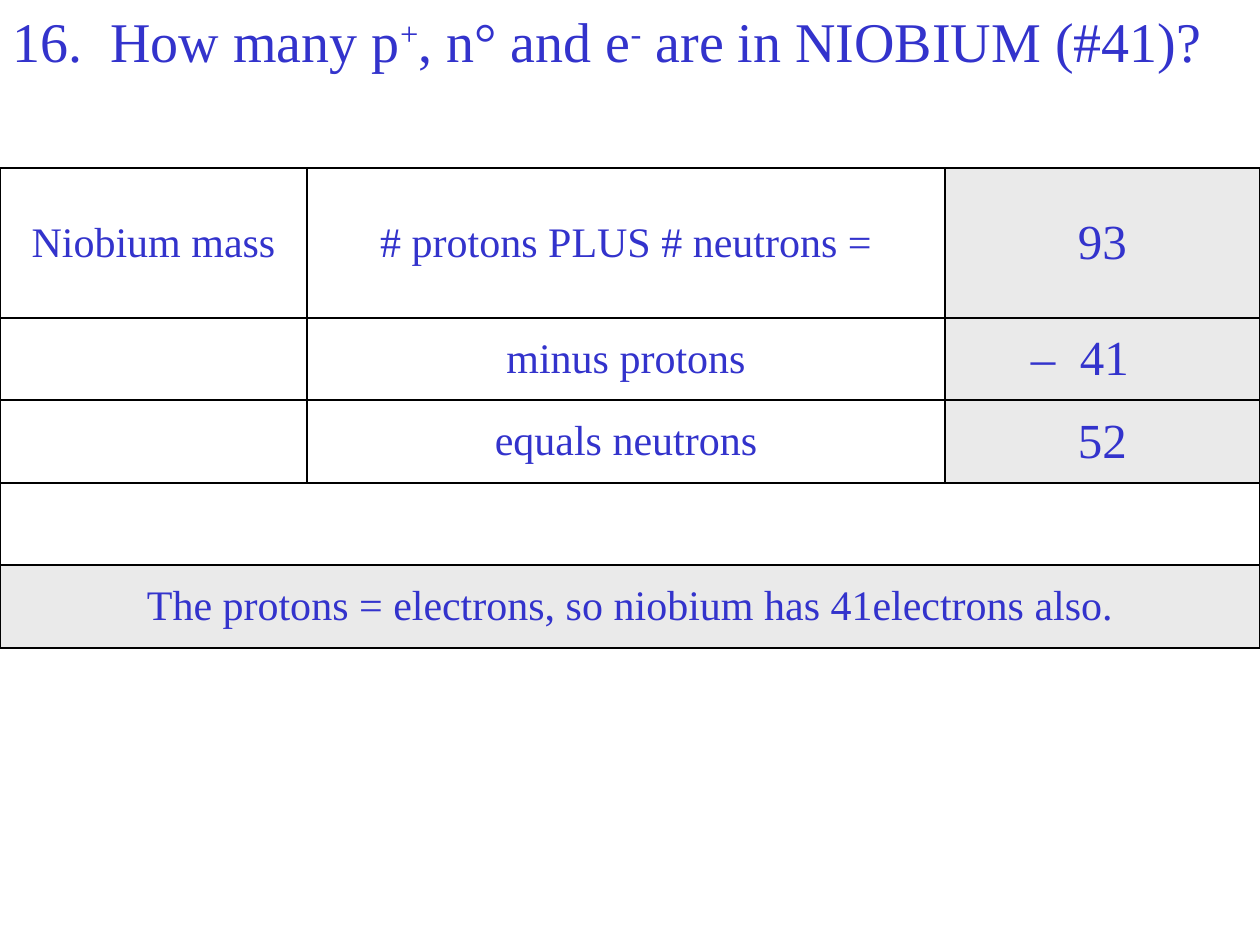
from lxml.etree import SubElement
from pptx import Presentation
from pptx.dml.color import RGBColor
from pptx.enum.text import MSO_ANCHOR as Anchor, PP_ALIGN as Align
from pptx.oxml.ns import qn
from pptx.util import Emu, Pt

BLUE = RGBColor(0x33, 0x33, 0xCC)
GREY = RGBColor(0xEA, 0xEA, 0xEA)
BLACK = RGBColor(0, 0, 0)
FONT = "Times New Roman"


def px(value):
    return Emu(round(value * 914400 / 126))


def add_text(paragraph, text, size=24, align=Align.CENTER, superscript=False):
    paragraph.alignment = align
    run = paragraph.add_run()
    run.text = text
    run.font.name = FONT
    run.font.size = Pt(size)
    run.font.color.rgb = BLUE
    if superscript:
        run.font._element.set("baseline", "30000")


presentation = Presentation()
presentation.slide_width, presentation.slide_height = px(1260), px(945)
slide = presentation.slides.add_slide(presentation.slide_layouts[6])

# Question
question = slide.shapes.add_textbox(0, 0, px(1260), px(90)).text_frame
question.word_wrap = True
for text, superscript in [
    ("16.  How many p", False),
    ("+", True),
    (", n° and e", False),
    ("-", True),
    (" are in NIOBIUM (#41)?", False),
]:
    add_text(question.paragraphs[0], text, size=32, align=Align.LEFT,
             superscript=superscript)

# Table grid
column_widths = [307, 638, 315]
row_heights = [150, 82, 83, 82, 83]
table = slide.shapes.add_table(
    len(row_heights), len(column_widths), 0, px(168),
    px(sum(column_widths)), px(sum(row_heights))).table
table.first_row = table.horz_banding = False
for column, width in zip(table.columns, column_widths):
    column.width = px(width)
for row, height in zip(table.rows, row_heights):
    row.height = px(height)
for row_index in (3, 4):
    table.cell(row_index, 0).merge(table.cell(row_index, 2))

# Borders and fills
for row_index in range(len(row_heights)):
    for column_index in range(len(column_widths)):
        cell = table.cell(row_index, column_index)
        if cell.is_spanned:
            continue
        cell.vertical_anchor = Anchor.MIDDLE
        properties = cell._tc.get_or_add_tcPr()
        for side in ("a:lnL", "a:lnR", "a:lnT", "a:lnB"):
            line = SubElement(properties, qn(side), w=str(Pt(1)))
            solid = SubElement(line, qn("a:solidFill"))
            SubElement(solid, qn("a:srgbClr"), val=str(BLACK))
        if row_index == 4 or (row_index < 3 and column_index == 2):
            cell.fill.solid()
            cell.fill.fore_color.rgb = GREY
        else:
            cell.fill.background()

# Cell wording
for row_index, column_index, text, size in [
    (0, 0, "Niobium mass", 24),
    (0, 1, "# protons PLUS # neutrons =", 24),
    (0, 2, "93", 28),
    (1, 1, "minus protons", 24),
    (2, 1, "equals neutrons", 24),
    (2, 2, "52", 28),
    (4, 0, "The protons = electrons, so niobium has 41electrons also.", 24),
]:
    cell = table.cell(row_index, column_index)
    add_text(cell.text_frame.paragraphs[0], text, size=size)

# The subtracted number is indented so its digits line up with the others
subtracted = table.cell(1, 2)
subtracted.margin_left = px(86)
add_text(subtracted.text_frame.paragraphs[0], "–  41", size=28, align=Align.LEFT)

presentation.save("out.pptx")
